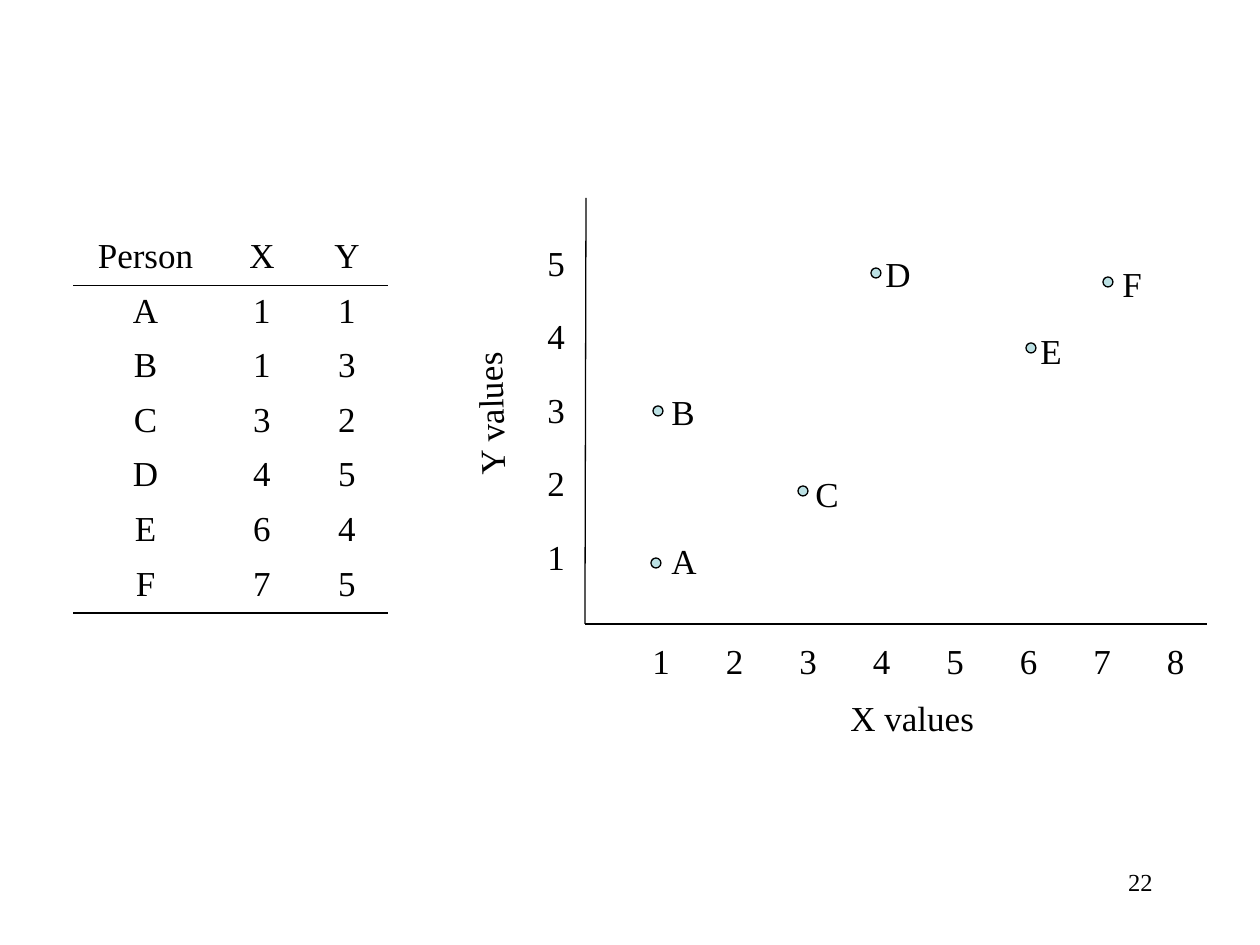
from lxml.etree import SubElement
from pptx import Presentation
from pptx.dml.color import RGBColor
from pptx.enum.shapes import MSO_CONNECTOR, MSO_SHAPE
from pptx.enum.text import MSO_AUTO_SIZE, PP_ALIGN
from pptx.oxml import parse_xml
from pptx.oxml.ns import nsdecls, qn
from pptx.util import Emu, Pt

PX = Emu(914400 / 126)
BLACK = "000000"
NO_GRID_STYLE = "{2D5ABB26-0587-4C30-8999-92F81FD0307C}"
colour = RGBColor.from_string


def px(*lengths):
    return [Emu(round(length * 914400 / 126)) for length in lengths]


def write(frame, text, size=20, align=PP_ALIGN.LEFT, font="Times New Roman", ink=BLACK):
    paragraph = frame.paragraphs[0]
    paragraph.alignment = align
    run = paragraph.add_run()
    run.text = text
    run.font.size = Pt(size)
    run.font.name = font
    run.font.color.rgb = colour(ink)


prs = Presentation()
prs.slide_width, prs.slide_height = px(1260, 945)
slide = prs.slides.add_slide(prs.slide_layouts[6])
shapes = slide.shapes

people = [
    ("Person", "X", "Y"),
    ("A", "1", "1"),
    ("B", "1", "3"),
    ("C", "3", "2"),
    ("D", "4", "5"),
    ("E", "6", "4"),
    ("F", "7", "5"),
]
scores = shapes.add_table(len(people), 3, *px(73, 231, 315, 382)).table
scores.first_row = scores.horz_banding = False
scores._tbl.tblPr.find(qn("a:tableStyleId")).text = NO_GRID_STYLE
for column, width in zip(scores.columns, px(145, 88, 82)):
    column.width = width
for row, person in enumerate(people):
    for column, value in enumerate(person):
        cell = scores.cell(row, column)
        cell.fill.background()
        write(cell.text_frame, value, align=PP_ALIGN.CENTER)
        if row in (0, len(people) - 1):
            rule = parse_xml(
                f'<a:lnB {nsdecls("a")} w="12700"><a:solidFill>'
                f'<a:srgbClr val="{BLACK}"/></a:solidFill></a:lnB>'
            )
            cell._tc.get_or_add_tcPr().insert(0, rule)

for ends in [(586, 198, 585, 624), (585, 624, 1207, 624)]:
    axis = shapes.add_connector(MSO_CONNECTOR.STRAIGHT, *px(*ends))
    axis.line.color.rgb = colour(BLACK)
    axis.line.width = Pt(0.75)
    SubElement(axis._element.spPr, qn("a:effectLst"))

for left, top in [(651, 558), (653, 406), (798, 486), (871, 268), (1026, 343), (1103, 277)]:
    point = shapes.add_shape(MSO_SHAPE.OVAL, *px(left, top, 10, 10))
    point.shadow.inherit = False
    point.fill.solid()
    point.fill.fore_color.rgb = colour("BBE0E3")
    point.line.color.rgb = colour(BLACK)
    point.line.width = Pt(0.75)

TICK_STEP = 73.5
labels = [("Y values", 415, 386, 149, 268.4), ("X values", 838, 690, 149, 0)]
labels += [(str(n + 1), 535, 529 - n * TICK_STEP, 43, 0) for n in range(5)]
labels += [(str(n + 1), 640 + n * TICK_STEP, 633, 43, 0) for n in range(8)]
labels += [
    ("A", 659, 533, 50, 0),
    ("B", 659, 384, 49, 0),
    ("C", 803, 466, 49, 0),
    ("D", 873, 246, 50, 0),
    ("E", 1028, 323, 47, 0),
    ("F", 1110, 256, 45, 0),
]
for text, left, top, width, rotation in labels:
    label = shapes.add_textbox(*px(left, top, width, 54))
    label.rotation = rotation
    label.text_frame.word_wrap = False
    label.text_frame.auto_size = MSO_AUTO_SIZE.SHAPE_TO_FIT_TEXT
    write(label.text_frame, text)

page_number = shapes.add_textbox(*px(903, 861, 262, 63))
page_number.text_frame.word_wrap = True
write(page_number.text_frame, "22", size=14, align=PP_ALIGN.RIGHT)

prs.save("out.pptx")
